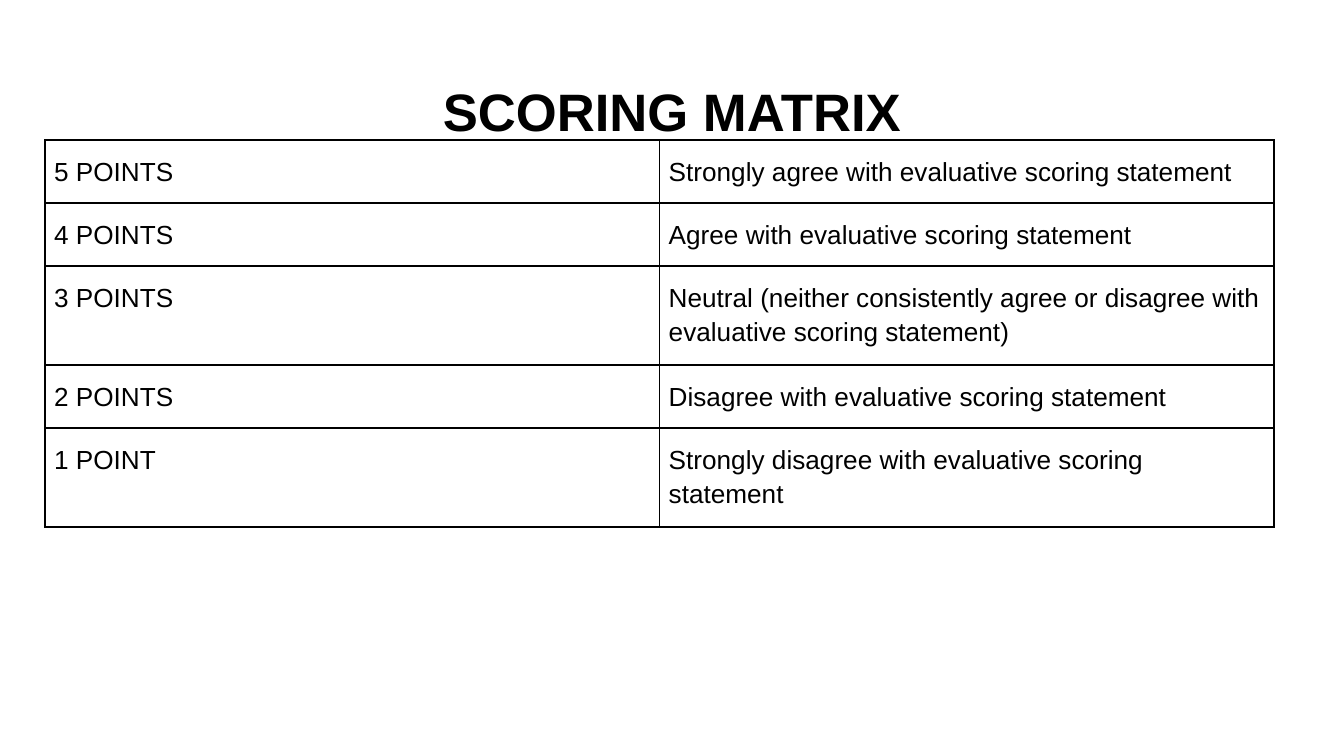
from typing import NamedTuple

from pptx import Presentation
from pptx.dml.color import RGBColor
from pptx.enum.text import MSO_ANCHOR, PP_ALIGN
from pptx.oxml import parse_xml
from pptx.oxml.ns import nsdecls
from pptx.util import Pt

COLORS = {"ink": "000000", "paper": "FFFFFF"}
FONT = "Arial"
COLUMN_WIDTH = 329.25
ONE_LINE, TWO_LINES = 32.4, 50.6


class Score(NamedTuple):
    points: str
    meaning: str
    height: float = ONE_LINE


SCORES = [
    Score("5 POINTS", "Strongly agree with evaluative scoring statement"),
    Score("4 POINTS", "Agree with evaluative scoring statement"),
    Score("3 POINTS", "Neutral (neither consistently agree or disagree with "
          "evaluative scoring statement)", TWO_LINES),
    Score("2 POINTS", "Disagree with evaluative scoring statement"),
    Score("1 POINT", "Strongly disagree with evaluative scoring statement", TWO_LINES),
]


def add_run(paragraph, text: str, size: float, bold: bool = False) -> None:
    run = paragraph.add_run()
    run.text = text
    run.font.name = FONT
    run.font.size = Pt(size)
    run.font.bold = bold
    run.font.color.rgb = RGBColor.from_string(COLORS["ink"])


def add_title(slide, text: str) -> None:
    title = slide.shapes.add_textbox(Pt(24.5), Pt(35.3), Pt(671), Pt(45.4))
    frame = title.text_frame
    frame.word_wrap = True
    frame.vertical_anchor = MSO_ANCHOR.TOP
    frame.margin_left = frame.margin_right = Pt(7.2)
    frame.margin_top = frame.margin_bottom = Pt(7.2)
    heading = frame.paragraphs[0]
    heading.alignment = PP_ALIGN.CENTER
    add_run(heading, text, 28.2, bold=True)


def add_borders(cell) -> None:
    """Rule all four sides; the schema wants the lines before the fill."""
    properties = cell._tc.get_or_add_tcPr()
    for position, side in enumerate(("lnL", "lnR", "lnT", "lnB")):
        properties.insert(position, parse_xml(
            f'<a:{side} {nsdecls("a")} w="{Pt(1)}"><a:solidFill>'
            f'<a:srgbClr val="{COLORS["ink"]}"/></a:solidFill></a:{side}>'))


def fill_cell(cell, text: str) -> None:
    cell.fill.background()
    add_borders(cell)
    cell.margin_left = cell.margin_right = Pt(5)
    cell.margin_top = cell.margin_bottom = Pt(7.2)
    paragraph = cell.text_frame.paragraphs[0]
    paragraph.line_spacing = 1.15
    paragraph.space_before = paragraph.space_after = Pt(12)
    add_run(paragraph, text, 14)


def add_matrix(slide, scores: list[Score]) -> None:
    height = sum(score.height for score in scores)
    matrix = slide.shapes.add_table(
        len(scores), 2, Pt(24), Pt(75), Pt(2 * COLUMN_WIDTH), Pt(height)).table
    matrix.first_row = matrix.horz_banding = False
    for column in matrix.columns:
        column.width = Pt(COLUMN_WIDTH)
    for index, score in enumerate(scores):
        matrix.rows[index].height = Pt(score.height)
        fill_cell(matrix.cell(index, 0), score.points)
        fill_cell(matrix.cell(index, 1), score.meaning)


def main() -> None:
    deck = Presentation()
    deck.slide_width, deck.slide_height = Pt(720), Pt(405)
    slide = deck.slides.add_slide(deck.slide_layouts[6])
    background = slide.background.fill
    background.solid()
    background.fore_color.rgb = RGBColor.from_string(COLORS["paper"])
    add_title(slide, "SCORING MATRIX")
    add_matrix(slide, SCORES)
    deck.save("out.pptx")


if __name__ == "__main__":
    main()
